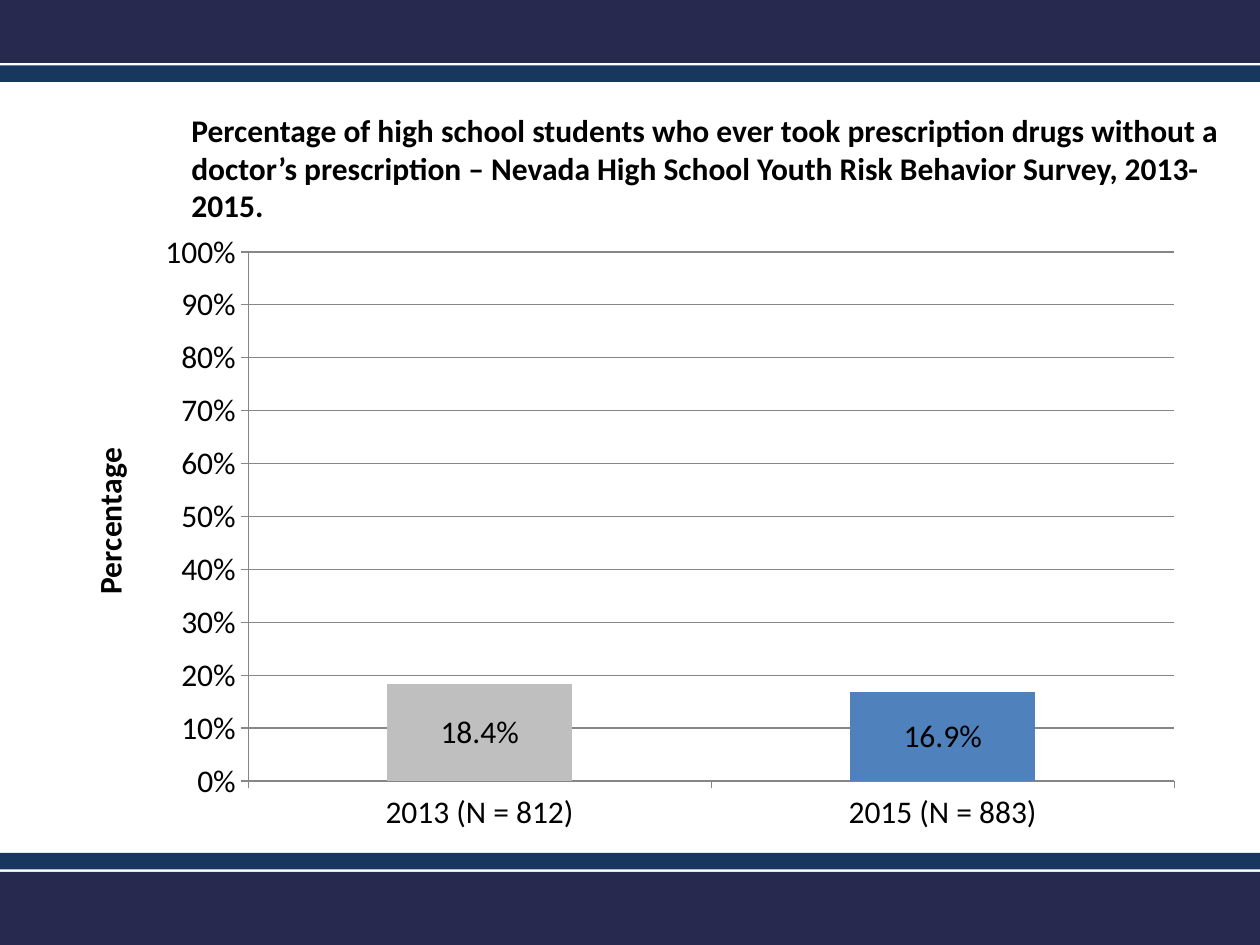
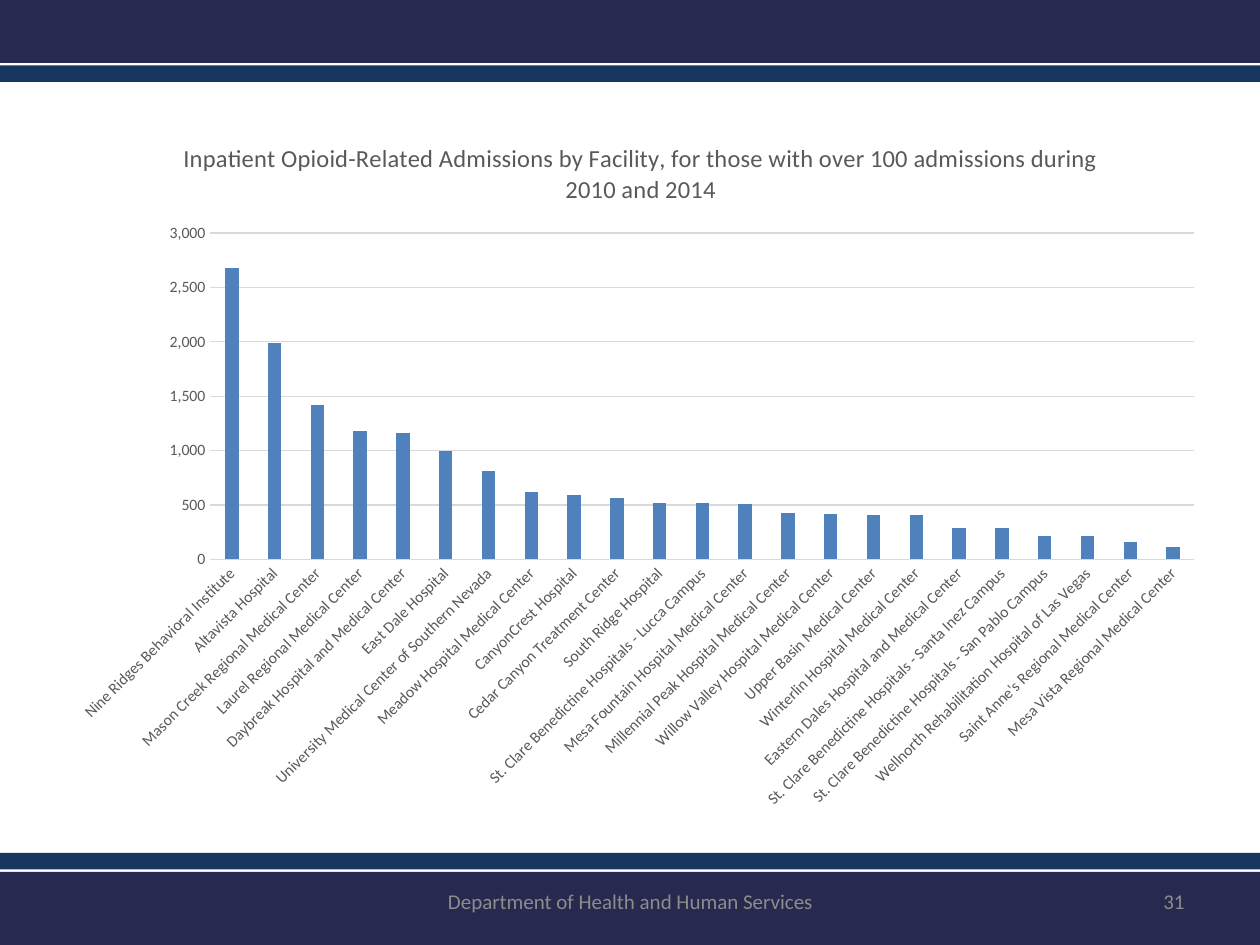
import pptx
import pptx.util
import pptx.chart.data
import pptx.dml.color
import pptx.enum.chart
import pptx.enum.shapes
import pptx.enum.text
import pptx.oxml

Inches = pptx.util.Inches
Pt = pptx.util.Pt
RGBColor = pptx.dml.color.RGBColor
TickMark = pptx.enum.chart.XL_TICK_MARK
Align = pptx.enum.text.PP_ALIGN
Anchor = pptx.enum.text.MSO_ANCHOR

NAVY = RGBColor(0x28, 0x29, 0x4E)
BLUE = RGBColor(0x17, 0x37, 0x5E)
BAR_BLUE = RGBColor(0x4F, 0x81, 0xBD)
BAR_GRAY = RGBColor(0xBF, 0xBF, 0xBF)
AXIS_GRAY = RGBColor(0x86, 0x86, 0x86)
GRID_GRAY = RGBColor(0xD9, 0xD9, 0xD9)
LABEL_GRAY = RGBColor(0x59, 0x59, 0x59)
FOOTER_GRAY = RGBColor(0x8C, 0x8C, 0x8C)
BLACK = RGBColor(0, 0, 0)
FONT = "Calibri"
WIDTH, HEIGHT = 10, 7.5

BANDS = [(0, 0.5, NAVY), (0.52, 0.13, BLUE), (6.92, 0.58, NAVY), (6.77, 0.13, BLUE)]

SURVEY_TITLE = (
    "Percentage of high school students who ever took prescription drugs without a "
    "doctor’s prescription – Nevada High School Youth Risk Behavior Survey, 2013-2015."
)
SURVEY = [("2013 (N = 812)", 0.184), ("2015 (N = 883)", 0.169)]
SURVEY_BOX = (0.5, 1.75, 9, 4.95)
SURVEY_PLOT = (1.97, 2, 7.35, 4.2)
PERCENTAGE_CORNER = (0.65, 3.51)

ADMISSIONS_TITLE = (
    "Inpatient Opioid-Related Admissions by Facility, for those with over 100 "
    "admissions during 2010 and 2014"
)
ADMISSIONS = [
    ("Nine Ridges Behavioral Institute", 2680),
    ("Altavista Hospital", 1990),
    ("Mason Creek Regional Medical Center", 1420),
    ("Laurel Regional Medical Center", 1180),
    ("Daybreak Hospital and Medical Center", 1160),
    ("East Dale Hospital", 1000),
    ("University Medical Center of Southern Nevada", 810),
    ("Meadow Hospital Medical Center", 620),
    ("CanyonCrest Hospital", 590),
    ("Cedar Canyon Treatment Center", 560),
    ("South Ridge Hospital", 520),
    ("St. Clare Benedictine Hospitals - Lucca Campus", 520),
    ("Mesa Fountain Hospital Medical Center", 510),
    ("Millennial Peak Hospital Medical Center", 430),
    ("Willow Valley Hospital Medical Center", 420),
    ("Upper Basin Medical Center", 410),
    ("Winterlin Hospital Medical Center", 410),
    ("Eastern Dales Hospital and Medical Center", 290),
    ("St. Clare Benedictine Hospitals - Santa Inez Campus", 290),
    ("St. Clare Benedictine Hospitals - San Pablo Campus", 210),
    ("Wellnorth Rehabilitation Hospital of Las Vegas", 210),
    ("Saint Anne's Regional Medical Center", 160),
    ("Mesa Vista Regional Medical Center", 110),
]
ADMISSIONS_BOX = (0.5, 0.92, 9.17, 5.67)
ADMISSIONS_PLOT = (1.67, 1.85, 7.81, 2.59)
FOOTER = "Department of Health and Human Services"
SLIDE_NUMBER = "31"


def set_font(font, size, color, bold=False):
    font.name = FONT
    font.size = Pt(size)
    font.bold = bold
    font.color.rgb = color


def add_text(slide, text, box, size=12, color=BLACK, bold=False,
             align=Align.LEFT, anchor=Anchor.TOP):
    shape = slide.shapes.add_textbox(*map(Inches, box))
    frame = shape.text_frame
    frame.word_wrap = True
    frame.vertical_anchor = anchor
    paragraph = frame.paragraphs[0]
    paragraph.text = text
    paragraph.alignment = align
    set_font(paragraph.runs[0].font, size, color, bold)


def add_banded_slide(presentation):
    slide = presentation.slides.add_slide(presentation.slide_layouts[6])
    for top, height, color in BANDS:
        band = slide.shapes.add_shape(
            pptx.enum.shapes.MSO_SHAPE.RECTANGLE,
            0, Inches(top), Inches(WIDTH), Inches(height))
        band.shadow.inherit = False
        band.fill.solid()
        band.fill.fore_color.rgb = color
        band.line.fill.background()
    return slide


def place_in_chart(parent, index, chart_box, place):
    left, top, width, height = chart_box
    shares = [(place[0] - left) / width, (place[1] - top) / height]
    target = ""
    if len(place) == 4:
        shares += [place[2] / width, place[3] / height]
        target = '<c:layoutTarget val="inner"/>'
    values = "".join(f'<c:{name} val="{share:.4f}"/>' for name, share in zip("xywh", shares))
    for layout in parent.xpath("c:layout"):
        parent.remove(layout)
    parent.insert(index, pptx.oxml.parse_xml(
        '<c:layout xmlns:c="http://schemas.openxmlformats.org/drawingml/2006/chart">'
        f'<c:manualLayout>{target}<c:xMode val="edge"/><c:yMode val="edge"/>'
        f'{values}</c:manualLayout></c:layout>'))


def add_column_chart(slide, rows, box, plot_box, number_format, maximum, step,
                     size, text_color, line_color, tick_mark, gap=150, overlap=0):
    data = pptx.chart.data.CategoryChartData()
    data.categories = [name for name, value in rows]
    data.add_series("Series 1", [value for name, value in rows])
    chart = slide.shapes.add_chart(
        pptx.enum.chart.XL_CHART_TYPE.COLUMN_CLUSTERED, *map(Inches, box), data).chart
    set_font(chart.font, size, text_color)
    chart.has_legend = False
    chart.has_title = False
    place_in_chart(chart._chartSpace.chart.plotArea, 0, box, plot_box)

    plot = chart.plots[0]
    plot.vary_by_categories = False
    plot.gap_width = gap
    plot.overlap = overlap
    fill = plot.series[0].format.fill
    fill.solid()
    fill.fore_color.rgb = BAR_BLUE

    value_axis = chart.value_axis
    value_axis.minimum_scale = 0
    value_axis.maximum_scale = maximum
    value_axis.major_unit = step
    value_axis.has_major_gridlines = True
    value_axis.tick_labels.number_format = number_format
    value_axis.tick_labels.number_format_is_linked = False
    for axis in (chart.category_axis, value_axis):
        axis.major_tick_mark = tick_mark
        axis.minor_tick_mark = TickMark.NONE
        set_font(axis.tick_labels.font, size, text_color)
    for part in (chart.category_axis, value_axis, value_axis.major_gridlines):
        part.format.line.color.rgb = line_color
        part.format.line.width = Pt(0.75)
    return chart


def set_title(title, text, size, color, bold=False):
    paragraph = title.text_frame.paragraphs[0]
    paragraph.text = text
    set_font(paragraph.runs[0].font, size, color, bold)


def build_survey_slide(presentation):
    slide = add_banded_slide(presentation)
    chart = add_column_chart(
        slide, SURVEY, SURVEY_BOX, SURVEY_PLOT,
        "0%", 1, 0.1, 18, BLACK, AXIS_GRAY, TickMark.OUTSIDE)
    axis_title = chart.value_axis.axis_title
    set_title(axis_title, "Percentage", 18, BLACK, bold=True)
    axis_title._element.xpath(".//a:bodyPr")[0].set("rot", "-5400000")
    place_in_chart(axis_title._element, 1, SURVEY_BOX, PERCENTAGE_CORNER)

    first_bar = chart.plots[0].series[0].points[0].format.fill
    first_bar.solid()
    first_bar.fore_color.rgb = BAR_GRAY
    labels = chart.plots[0].series[0].data_labels
    labels.show_value = True
    labels.number_format = "0.0%"
    labels.number_format_is_linked = False
    labels.position = pptx.enum.chart.XL_LABEL_POSITION.CENTER
    set_font(labels.font, 18, BLACK)
    add_text(slide, SURVEY_TITLE, (1.42, 0.83, 8.58, 1.01), size=18, bold=True)


def build_admissions_slide(presentation):
    slide = add_banded_slide(presentation)
    footer_style = dict(color=FOOTER_GRAY, anchor=Anchor.MIDDLE)
    add_text(slide, FOOTER, (3.42, 6.95, 3.17, 0.4), align=Align.CENTER, **footer_style)
    add_text(slide, SLIDE_NUMBER, (7.17, 6.95, 2.33, 0.4), align=Align.RIGHT, **footer_style)
    chart = add_column_chart(
        slide, ADMISSIONS, ADMISSIONS_BOX, ADMISSIONS_PLOT,
        "###,###,##0", 3000, 500, 9, LABEL_GRAY, GRID_GRAY, TickMark.NONE,
        gap=219, overlap=-27)
    chart.value_axis.format.line.fill.background()
    chart.category_axis._element.xpath("c:txPr/a:bodyPr")[0].set("rot", "-2700000")
    set_title(chart.chart_title, ADMISSIONS_TITLE, 14, LABEL_GRAY)
    chart.chart_title.include_in_layout = False


def main():
    presentation = pptx.Presentation()
    presentation.slide_width = Inches(WIDTH)
    presentation.slide_height = Inches(HEIGHT)
    build_survey_slide(presentation)
    build_admissions_slide(presentation)
    presentation.save("out.pptx")


if __name__ == "__main__":
    main()
